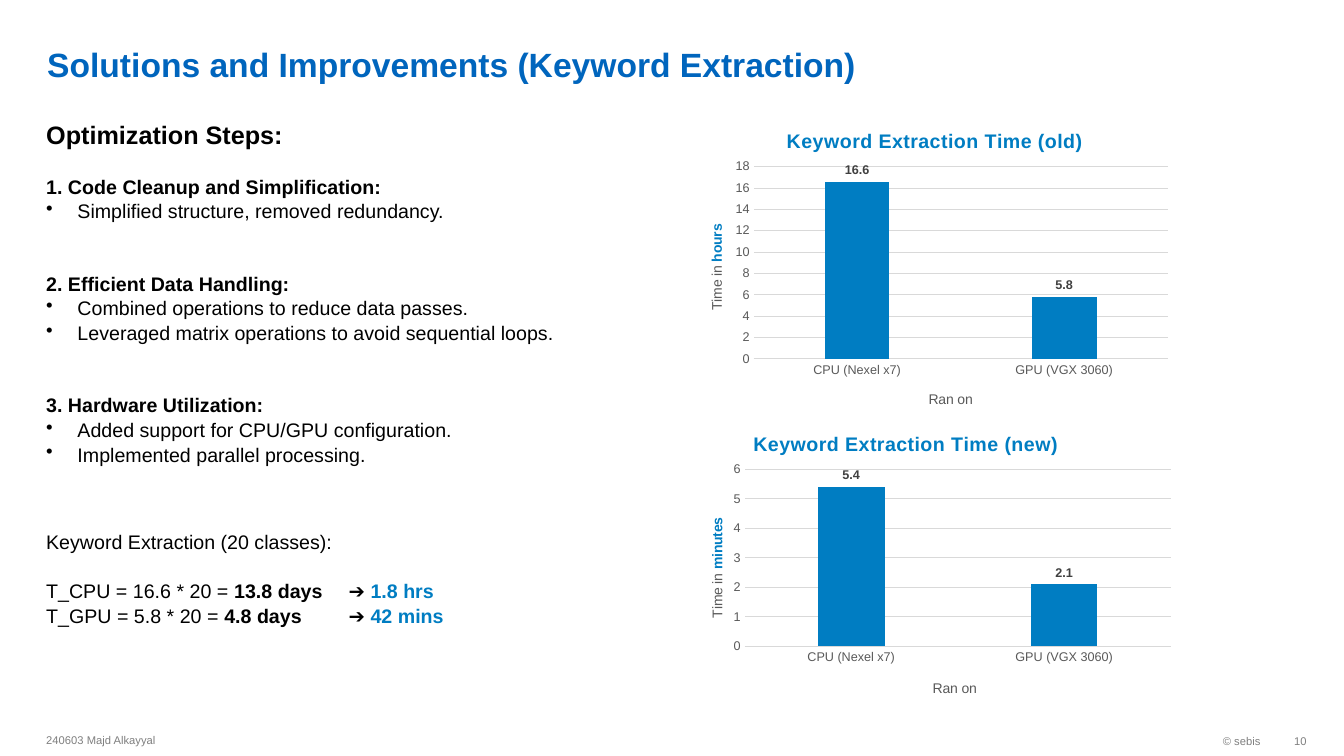
from dataclasses import dataclass

from lxml.etree import SubElement
from pptx import Presentation
from pptx.chart.data import CategoryChartData
from pptx.dml.color import RGBColor
from pptx.enum.chart import XL_CHART_TYPE, XL_LABEL_POSITION, XL_TICK_MARK
from pptx.enum.text import MSO_ANCHOR, PP_ALIGN
from pptx.oxml.ns import qn
from pptx.util import Inches, Pt


@dataclass(frozen=True)
class Theme:
    font: str = "Arial"
    headline: RGBColor = RGBColor(0x00, 0x65, 0xBD)
    accent: RGBColor = RGBColor(0x00, 0x7D, 0xC2)
    ink: RGBColor = RGBColor(0x00, 0x00, 0x00)
    label: RGBColor = RGBColor(0x40, 0x40, 0x40)
    axis: RGBColor = RGBColor(0x59, 0x59, 0x59)
    footer: RGBColor = RGBColor(0x7F, 0x7F, 0x7F)
    grid: RGBColor = RGBColor(0xD9, 0xD9, 0xD9)
    title_size: int = 24
    heading_size: int = 18
    body_size: int = 14
    axis_title_size: int = 10
    tick_size: int = 9
    footer_size: int = 8
    body_spacing: float = 1.05
    line_gap: int = 17


THEME = Theme()
PROCESSORS = ["CPU (Nexel x7)", "GPU (VGX 3060)"]
STEPS = [
    ("1. Code Cleanup and Simplification:",
     ["Simplified structure, removed redundancy."]),
    ("2. Efficient Data Handling:",
     ["Combined operations to reduce data passes.",
      "Leveraged matrix operations to avoid sequential loops."]),
    ("3. Hardware Utilization:",
     ["Added support for CPU/GPU configuration.",
      "Implemented parallel processing."]),
]
TOTALS = [
    ("T_CPU = 16.6 * 20 = ", "13.8 days", "1.8 hrs"),
    ("T_GPU = 5.8 * 20 = ", "4.8 days", "42 mins"),
]


# Text
def style_font(font, size, color, bold=False):
    font.name, font.size, font.bold = THEME.font, Pt(size), bold
    font.color.rgb = color


def write(paragraph, text, *, size=THEME.body_size, color=THEME.ink, bold=False):
    run = paragraph.add_run()
    run.text = text
    style_font(run.font, size, color, bold)
    return run


def add_text_frame(slide, box, anchor=MSO_ANCHOR.TOP):
    frame = slide.shapes.add_textbox(*map(Inches, box)).text_frame
    frame.word_wrap = True
    frame.vertical_anchor = anchor
    return frame


def add_line(frame, before=0):
    """Start the next paragraph, reusing the empty first one."""
    first = frame.paragraphs[0]
    line = frame.add_paragraph() if first.runs else first
    line.line_spacing = THEME.body_spacing
    line.space_before = Pt(before)
    return line


def add_bullet(frame, text):
    line = add_line(frame)
    properties = line._p.get_or_add_pPr()
    properties.set("marL", str(Inches(0.31)))
    properties.set("indent", str(-Inches(0.31)))
    SubElement(properties, qn("a:buChar")).set("char", "•")
    write(line, text)


def add_title(slide):
    frame = add_text_frame(slide, (0.37, 0.05, 11.58, 0.79), MSO_ANCHOR.BOTTOM)
    frame.margin_top = frame.margin_bottom = 0
    frame.paragraphs[0].line_spacing = 1.15
    write(frame.paragraphs[0], "Solutions and Improvements (Keyword Extraction)",
          size=THEME.title_size, color=THEME.headline, bold=True)


def add_footer(slide, text, box, align=PP_ALIGN.RIGHT, right_margin=0.1):
    frame = add_text_frame(slide, box, MSO_ANCHOR.MIDDLE)
    frame.margin_right = Inches(right_margin)
    frame.paragraphs[0].alignment = align
    write(frame.paragraphs[0], text, size=THEME.footer_size, color=THEME.footer)


def add_steps(slide):
    frame = add_text_frame(slide, (0.36, 1.12, 6.61, 3.47))
    write(add_line(frame), "Optimization Steps:", size=THEME.heading_size, bold=True)
    for index, (step, details) in enumerate(STEPS):
        gap = THEME.line_gap * (2 if index else 1)
        write(add_line(frame, gap), step, bold=True)
        for detail in details:
            add_bullet(frame, detail)


def add_totals(slide):
    frame = add_text_frame(slide, (0.36, 5.2, 4.3, 1.04))
    write(add_line(frame), "Keyword Extraction (20 classes):")
    for index, (formula, old, new) in enumerate(TOTALS):
        line = add_line(frame, 0 if index else THEME.line_gap)
        write(line, formula)
        write(line, f"{old}\t➔ ", bold=True)
        write(line, new, color=THEME.accent, bold=True)


# Charts
def place(element, x, y, w=None, h=None):
    """Fix a chart part at fractions of the chart's size."""
    for layout in element.findall(qn("c:layout")):
        element.remove(layout)
    manual_parent = element.makeelement(qn("c:layout"))
    element.insert(0 if element.find(qn("c:tx")) is None else 1, manual_parent)
    manual = SubElement(manual_parent, qn("c:manualLayout"))
    settings = [("xMode", "edge"), ("yMode", "edge"),
                ("x", x), ("y", y), ("w", w), ("h", h)]
    if w is not None:
        settings.insert(0, ("layoutTarget", "inner"))
    for tag, value in settings:
        if value is not None:
            SubElement(manual, qn(f"c:{tag}")).set("val", str(value))


def style_axis(axis):
    axis.major_tick_mark = axis.minor_tick_mark = XL_TICK_MARK.NONE
    style_font(axis.tick_labels.font, THEME.tick_size, THEME.axis)


def add_axis_title(axis, text, position):
    title = axis.axis_title
    line = title.text_frame.paragraphs[0]
    write(line, text, size=THEME.axis_title_size, color=THEME.axis)
    place(title._element, *position)
    return title.text_frame


def add_time_chart(slide, box, *, title, unit, times, top, step,
                   title_at, unit_at, plot):
    data = CategoryChartData()
    data.categories = PROCESSORS
    data.add_series("Series 1", times)
    chart = slide.shapes.add_chart(
        XL_CHART_TYPE.COLUMN_CLUSTERED, *map(Inches, box), data).chart
    chart.has_legend = False
    style_font(chart.font, THEME.axis_title_size, THEME.ink)
    heading = write(chart.chart_title.text_frame.paragraphs[0], title,
                    color=THEME.accent, bold=True)
    heading.font._element.set("spc", "20")
    place(chart.chart_title._element, *title_at)
    place(chart._chartSpace.chart.plotArea, *plot)

    # Axes
    processors, time = chart.category_axis, chart.value_axis
    style_axis(processors)
    style_axis(time)
    time.minimum_scale, time.maximum_scale, time.major_unit = 0, top, step
    time.format.line.fill.background()
    for line in (processors.format.line, time.major_gridlines.format.line):
        line.color.rgb, line.width = THEME.grid, Pt(0.75)
    add_axis_title(processors, "Ran on", (0.5, 0.88))
    unit_frame = add_axis_title(time, "Time in ", unit_at)
    write(unit_frame.paragraphs[0], unit, size=THEME.axis_title_size,
          color=THEME.accent, bold=True)
    unit_frame._txBody.bodyPr.set("rot", "-5400000")
    unit_frame._txBody.bodyPr.set("vert", "horz")

    # Columns and their values
    columns = chart.plots[0]
    columns.gap_width, columns.overlap, columns.vary_by_categories = 219, -27, False
    fill = columns.series[0].format.fill
    fill.solid()
    fill.fore_color.rgb = THEME.accent
    labels = columns.series[0].data_labels
    labels.show_value = True
    labels.position = XL_LABEL_POSITION.OUTSIDE_END
    style_font(labels.font, THEME.tick_size, THEME.label, bold=True)


def main():
    deck = Presentation()
    deck.slide_width, deck.slide_height = Inches(13.33), Inches(7.5)
    slide = deck.slides.add_slide(deck.slide_layouts[6])

    add_title(slide)
    add_steps(slide)
    add_time_chart(slide, (6.74, 4.09, 4.97, 2.98),
                   title="Keyword Extraction Time (new)", unit="minutes",
                   times=(5.4, 2.1), top=6, step=1, title_at=(0.14, 0.05),
                   unit_at=(0.05, 0.34), plot=(0.13, 0.19, 0.85, 0.59))
    add_time_chart(slide, (6.74, 1.05, 4.89, 3.18),
                   title="Keyword Extraction Time (old)", unit="hours",
                   times=(16.6, 5.8), top=18, step=2, title_at=(0.21, 0.06),
                   unit_at=(0.05, 0.36), plot=(0.15, 0.19, 0.84, 0.6))
    add_totals(slide)
    add_footer(slide, "240603 Majd Alkayyal", (0.36, 7.18, 6.3, 0.32), PP_ALIGN.LEFT)
    add_footer(slide, "© sebis", (10.26, 7.19, 2.34, 0.32))
    add_footer(slide, "10", (12.6, 7.19, 0.36, 0.32), right_margin=0)

    deck.save("out.pptx")


if __name__ == "__main__":
    main()
